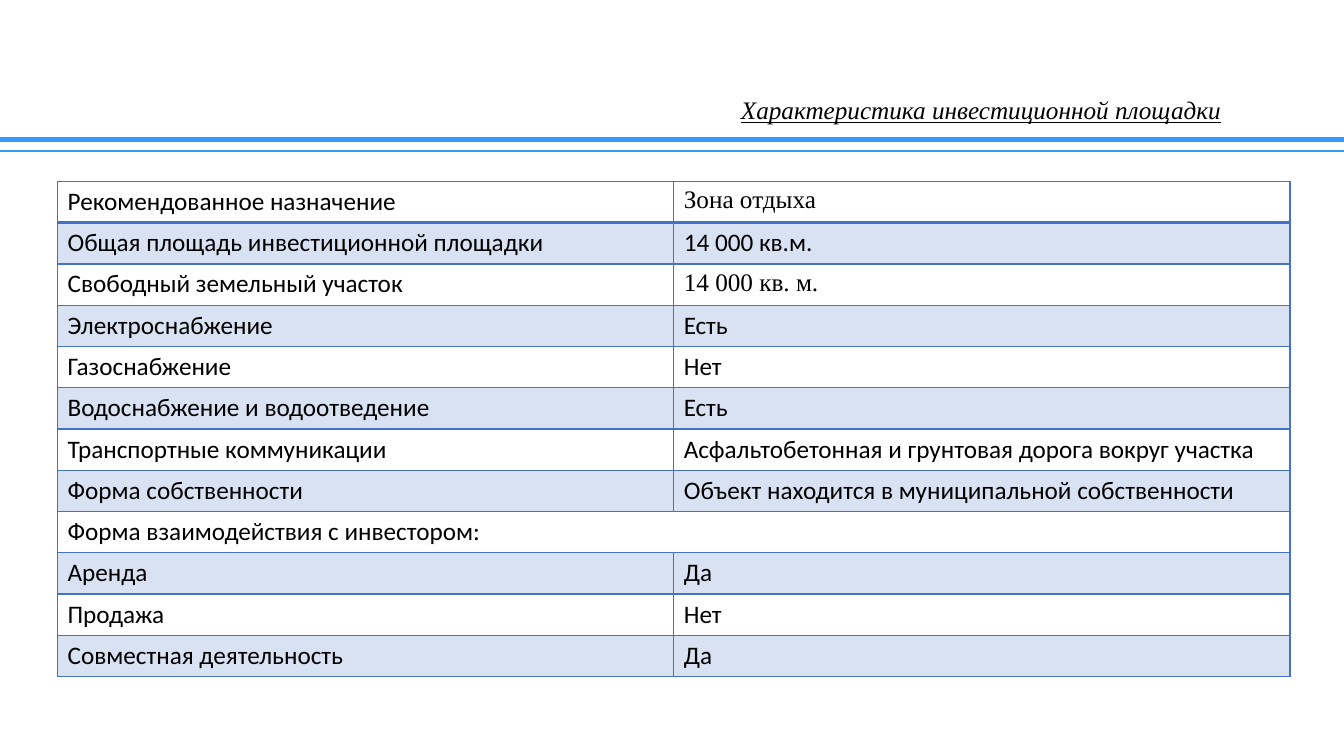
from lxml.etree import SubElement
from pptx import Presentation
from pptx.dml.color import RGBColor
from pptx.enum.shapes import MSO_CONNECTOR as Connector
from pptx.enum.text import MSO_ANCHOR as Anchor, MSO_AUTO_SIZE as AutoSize, PP_ALIGN as Align
from pptx.oxml.ns import qn
from pptx.util import Cm, Pt

SANS, SERIF = "Calibri", "Times New Roman"
BLACK, RULE_BLUE, TABLE_BLUE = "000000", "3399FF", "4472C4"
TITLE = "Характеристика инвестиционной площадки"
SITE_FACTS = [
    ("Рекомендованное назначение", "Зона отдыха"),
    ("Общая площадь инвестиционной площадки", "14 000 кв.м."),
    ("Свободный земельный участок", "14 000 кв. м."),
    ("Электроснабжение", "Есть"),
    ("Газоснабжение", "Нет"),
    ("Водоснабжение и водоотведение", "Есть"),
    ("Транспортные коммуникации", "Асфальтобетонная и грунтовая дорога вокруг участка"),
    ("Форма собственности", "Объект находится в муниципальной собственности"),
    ("Форма взаимодействия с инвестором:",),
    ("Аренда", "Да"),
    ("Продажа", "Нет"),
    ("Совместная деятельность", "Да"),
]
SERIF_VALUES = {"Зона отдыха", "14 000 кв. м."}


def rgb(hex_color):
    return RGBColor.from_string(hex_color)


def format_runs(paragraph, font_name):
    for run in paragraph.runs:
        run.font.name = font_name
        run.font.size = Pt(18)
        run.font.color.rgb = rgb(BLACK)
        run.font.bold = False


def place_title(slide):
    title = slide.shapes.title
    title.left, title.top, title.width, title.height = Cm(16.94), Cm(2.46), Cm(15.57), Cm(0.69)
    frame = title.text_frame
    frame.text = TITLE
    frame.word_wrap = True
    frame.auto_size = AutoSize.NONE
    frame.vertical_anchor = Anchor.MIDDLE
    heading = frame.paragraphs[0]
    heading.alignment = Align.CENTER
    heading.line_spacing = 0.9
    format_runs(heading, SERIF)
    for run in heading.runs:
        run.font.italic = True
        run.font.underline = True


def add_rule(slide, top, weight):
    rule = slide.shapes.add_connector(Connector.STRAIGHT, 0, top, Cm(33.87), top)
    rule.line.color.rgb = rgb(RULE_BLUE)
    rule.line.width = Pt(weight)
    SubElement(rule._element.spPr, qn("a:effectLst"))


def set_borders(cell, bottom_weight):
    properties = cell._tc.get_or_add_tcPr()
    for side, weight in (("L", 1), ("R", 1), ("T", 1), ("B", bottom_weight)):
        border = SubElement(properties, qn(f"a:ln{side}"), w=str(Pt(weight)))
        fill = SubElement(border, qn("a:solidFill"))
        SubElement(fill, qn("a:srgbClr"), val=TABLE_BLUE)


def fill_cell(cell, shaded):
    if not shaded:
        cell.fill.background()
        return
    cell.fill.solid()
    cell.fill.fore_color.rgb = rgb(TABLE_BLUE)
    tint = cell._tc.tcPr.find(qn("a:solidFill")).find(qn("a:srgbClr"))
    SubElement(tint, qn("a:alpha"), val="20000")


def add_facts_table(slide):
    row_height = Cm(1.04)
    table = slide.shapes.add_table(
        len(SITE_FACTS), 2, Cm(1.45), Cm(4.57), Cm(31.06), row_height * len(SITE_FACTS)
    ).table
    table.first_row = False
    table.horz_banding = False
    for column in table.columns:
        column.width = Cm(15.53)
    for index, facts in enumerate(SITE_FACTS):
        table.rows[index].height = row_height
        for cell in table.rows[index].cells:
            set_borders(cell, 2 if index == 0 else 1)
            fill_cell(cell, index % 2 == 1)
        if len(facts) == 1:
            table.cell(index, 0).merge(table.cell(index, 1))
        for column, fact in enumerate(facts):
            frame = table.cell(index, column).text_frame
            frame.text = fact
            format_runs(frame.paragraphs[0], SERIF if fact in SERIF_VALUES else SANS)


def main():
    deck = Presentation()
    deck.slide_width, deck.slide_height = Cm(33.87), Cm(19.05)
    slide = deck.slides.add_slide(deck.slide_layouts[5])
    add_rule(slide, Cm(3.51), 3.5)
    add_rule(slide, Cm(3.81), 1.5)
    place_title(slide)
    add_facts_table(slide)
    deck.save("out.pptx")


if __name__ == "__main__":
    main()
